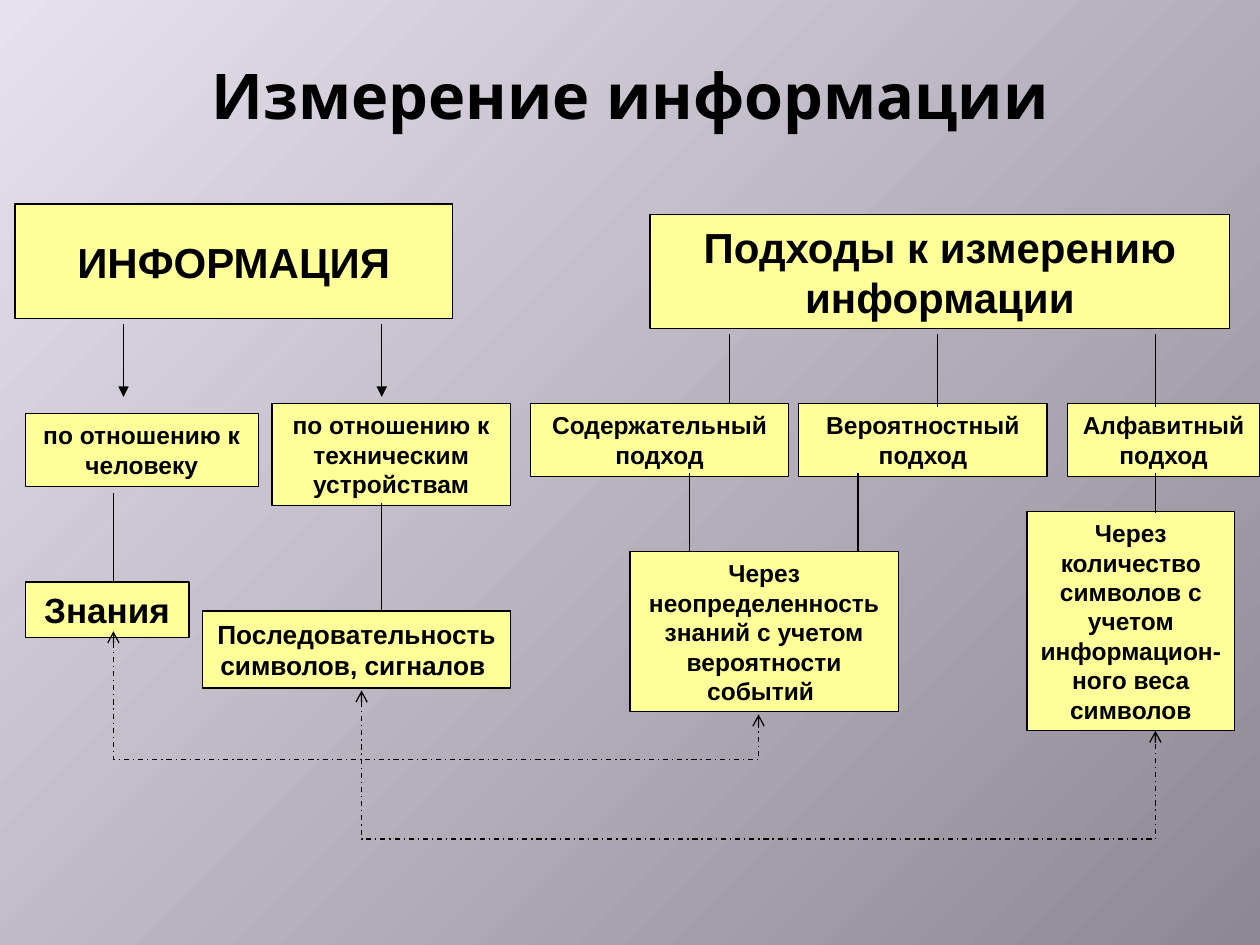
from lxml import etree
from pptx import Presentation
from pptx.dml.color import RGBColor
from pptx.enum.dml import MSO_LINE
from pptx.enum.shapes import MSO_CONNECTOR, MSO_SHAPE
from pptx.enum.text import MSO_ANCHOR, PP_ALIGN
from pptx.oxml.ns import qn
from pptx.util import Inches, Pt


def color(value):
    return RGBColor.from_string(value)


def write(shape, text, size, font):
    frame = shape.text_frame
    frame.word_wrap = True
    frame.vertical_anchor = MSO_ANCHOR.MIDDLE
    frame.text = text
    para = frame.paragraphs[0]
    para.alignment = PP_ALIGN.CENTER
    span = para.runs[0]
    span.font.name = font
    span.font.size = Pt(size)
    span.font.bold = True
    span.font.color.rgb = color("000000")


deck = Presentation()
deck.slide_width, deck.slide_height = Inches(10), Inches(7.5)
page = deck.slides.add_slide(deck.slide_layouts[6])
shapes = page.shapes

# Background: gradient spreading from the top left corner
fill = page.background.fill
fill.gradient()
for stop, value in zip(fill.gradient_stops, ("E6E1EC", "8E8895")):
    stop.color.rgb = color(value)
gradient = next(page.element.iter(qn("a:gradFill")))
gradient.remove(gradient.find(qn("a:lin")))
spread = etree.SubElement(gradient, qn("a:path"), {"path": "circle"})
etree.SubElement(spread, qn("a:fillToRect"), r="100000", b="100000")

# Title
title = shapes.add_textbox(Inches(0), Inches(0.28), Inches(10), Inches(0.93))
write(title, "Измерение информации", 36, "Noto Sans")

# Boxes: left, top, width, height, text size, text
boxes = [
    (0.12, 1.62, 3.47, 0.91, 24, "ИНФОРМАЦИЯ"),
    (5.16, 1.7, 4.6, 0.91, 24, "Подходы к измерению информации"),
    (0.2, 3.28, 1.85, 0.58, 14, "по отношению к человеку"),
    (2.16, 3.2, 1.89, 0.81, 14, "по отношению к техническим устройствам"),
    (4.21, 3.2, 2.05, 0.58, 14, "Содержательный подход"),
    (6.34, 3.2, 1.97, 0.58, 14, "Вероятностный подход"),
    (8.47, 3.2, 1.53, 0.58, 14, "Алфавитный подход"),
    (0.2, 4.62, 1.3, 0.44, 20, "Знания"),
    (1.61, 4.85, 2.44, 0.61, 15, "Последовательность символов, сигналов "),
    (5, 4.38, 2.13, 1.27, 14,
     "Через неопределенность знаний с учетом вероятности событий "),
    (8.15, 4.06, 1.65, 1.74, 14,
     "Через количество символов с учетом информацион-ного веса символов"),
]
for left, top, width, height, size, text in boxes:
    box = shapes.add_shape(MSO_SHAPE.RECTANGLE, Inches(left), Inches(top),
                           Inches(width), Inches(height))
    box.shadow.inherit = False
    box.fill.solid()
    box.fill.fore_color.rgb = color("FFFF99")
    box.line.color.rgb = color("000000")
    box.line.width = Pt(0.75)
    write(box, text, size, "Arial")

# Vertical links: x, top, bottom, has an arrowhead
links = [
    (0.98, 2.57, 3.15, True),
    (3.03, 2.57, 3.15, True),
    (5.79, 2.65, 3.2, False),
    (7.44, 2.65, 3.23, False),
    (9.17, 2.65, 3.23, False),
    (0.9, 3.91, 4.61, False),
    (3.03, 3.99, 4.85, False),
    (5.47, 3.75, 4.38, False),
    (6.81, 3.75, 4.38, False),
    (9.17, 3.75, 4.07, False),
]
for x, top, bottom, arrow in links:
    link = shapes.add_connector(MSO_CONNECTOR.STRAIGHT, Inches(x), Inches(top),
                                Inches(x), Inches(bottom))
    link.line.color.rgb = color("000000")
    link.line.width = Pt(0.75)
    if arrow:
        etree.SubElement(link.line._get_or_add_ln(), qn("a:tailEnd"), type="triangle")
    etree.SubElement(link._element.spPr, qn("a:effectLst"))

# Dashed two-way links: left x, left top, bottom, right x, right top
for left, left_top, bottom, right, right_top in [
    (0.9, 5.01, 6.03, 6.02, 5.67),
    (2.87, 5.48, 6.66, 9.17, 5.8),
]:
    builder = shapes.build_freeform(Inches(left), Inches(left_top))
    corners = [(left, bottom), (right, bottom), (right, right_top)]
    builder.add_line_segments([(Inches(x), Inches(y)) for x, y in corners], close=False)
    route = builder.convert_to_shape()
    route.shadow.inherit = False
    route.fill.background()
    route.line.color.rgb = color("000000")
    route.line.width = Pt(0.75)
    route.line.dash_style = MSO_LINE.DASH_DOT
    for end in ("a:headEnd", "a:tailEnd"):
        etree.SubElement(route.line._get_or_add_ln(), qn(end), type="arrow")

deck.save("out.pptx")
